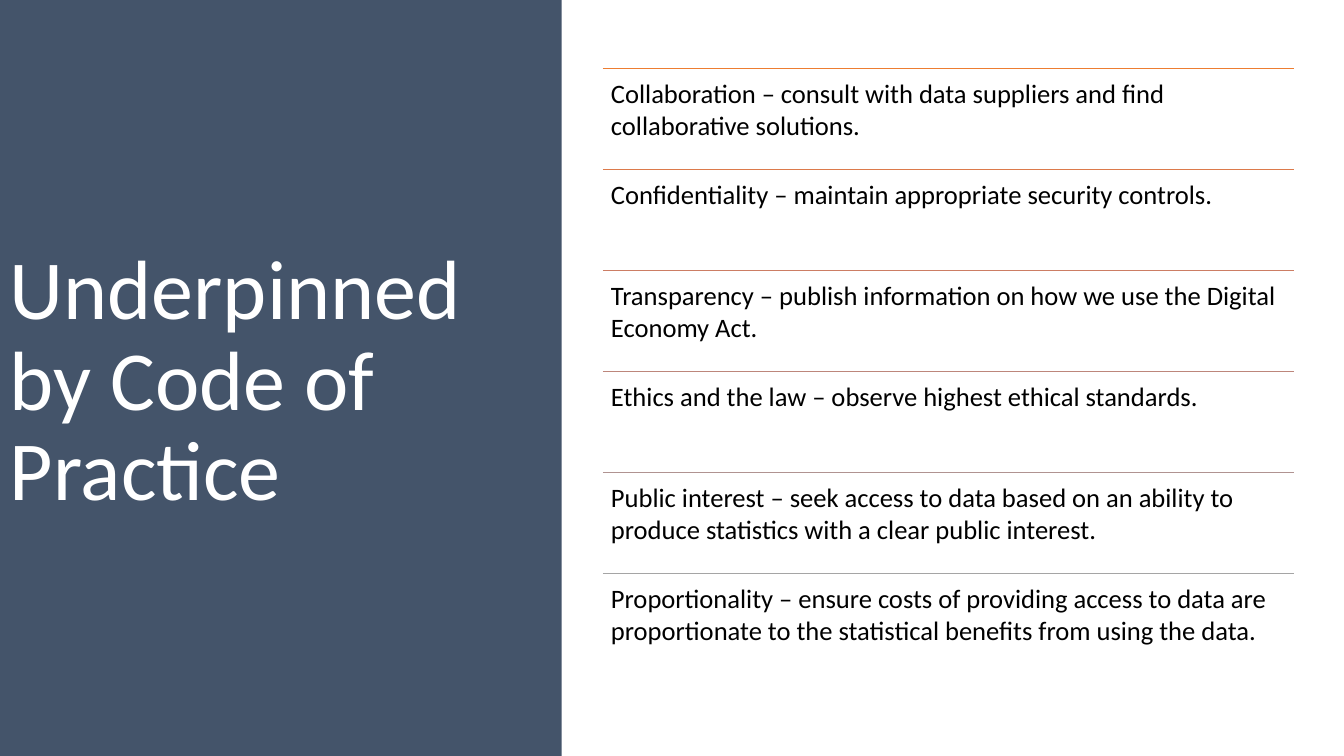
import pptx
import pptx.dml.color
import pptx.enum.shapes
import pptx.enum.text
import pptx.util
from lxml import etree
from pptx.oxml.ns import qn

RGBColor = pptx.dml.color.RGBColor
Inches = pptx.util.Inches

WHITE = RGBColor(0xFF, 0xFF, 0xFF)
BLACK = RGBColor(0x00, 0x00, 0x00)
SLATE = RGBColor(0x44, 0x54, 0x6A)

TITLE = "Underpinned by Code of Practice"
PRINCIPLES = [
    ("Collaboration – consult with data suppliers and find collaborative solutions.",
     RGBColor(0xED, 0x7D, 0x31)),
    ("Confidentiality – maintain appropriate security controls.",
     RGBColor(0xDC, 0x7A, 0x4B)),
    ("Transparency – publish information on how we use the Digital Economy Act.",
     RGBColor(0xCC, 0x7D, 0x64)),
    ("Ethics and the law – observe highest ethical standards.",
     RGBColor(0xBD, 0x86, 0x7B)),
    ("Public interest – seek access to data based on an ability to produce "
     "statistics with a clear public interest.",
     RGBColor(0xB0, 0x93, 0x91)),
    ("Proportionality – ensure costs of providing access to data are "
     "proportionate to the statistical benefits from using the data.",
     RGBColor(0xA5, 0xA5, 0xA5)),
]

SLIDE_W, SLIDE_H = 13.33, 7.5
PANEL_W, PANEL_H = 5.57, 7.6
LIST_LEFT, LIST_TOP, LIST_W = 5.98, 0.68, 6.85
ROW_H = 1.0025

TITLE_FONT = {"name": "Calibri", "size": pptx.util.Pt(60)}
ROW_FONT = {"name": "Calibri", "size": pptx.util.Pt(19)}
ROW_FRAME = {
    "word_wrap": True,
    "vertical_anchor": pptx.enum.text.MSO_ANCHOR.TOP,
    "margin_left": Inches(0.08),
    "margin_right": Inches(0.08),
    "margin_top": Inches(0.08),
    "margin_bottom": Inches(0.08),
}
TITLE_FRAME = {
    "word_wrap": True,
    "vertical_anchor": pptx.enum.text.MSO_ANCHOR.MIDDLE,
}


def write(sp, text, frame, font, color):
    """Put one left-aligned paragraph into a shape; return the paragraph."""
    tf = sp.text_frame
    for name, value in frame.items():
        setattr(tf, name, value)
    p = tf.paragraphs[0]
    p.alignment = pptx.enum.text.PP_ALIGN.LEFT
    r = p.add_run()
    r.text = text
    for name, value in font.items():
        setattr(r.font, name, value)
    r.font.color.rgb = color
    return p


def add_title_panel(s):
    sp = s.shapes.add_shape(pptx.enum.shapes.MSO_SHAPE.RECTANGLE,
                            0, 0, Inches(PANEL_W), Inches(PANEL_H))
    sp.shadow.inherit = False
    sp.fill.solid()
    sp.fill.fore_color.rgb = SLATE
    sp.line.fill.background()
    write(sp, TITLE, TITLE_FRAME, TITLE_FONT, WHITE).line_spacing = 0.9


def add_rule(s, y, color):
    line = s.shapes.add_connector(
        pptx.enum.shapes.MSO_CONNECTOR.STRAIGHT,
        Inches(LIST_LEFT), Inches(y), Inches(LIST_LEFT + LIST_W), Inches(y))
    line.line.color.rgb = color
    line.line.width = pptx.util.Pt(1)
    etree.SubElement(line._element.spPr, qn("a:effectLst"))


def add_principles(s):
    for i, (text, color) in enumerate(PRINCIPLES):
        y = LIST_TOP + i * ROW_H
        add_rule(s, y, color)
        sp = s.shapes.add_textbox(Inches(LIST_LEFT), Inches(y),
                                  Inches(LIST_W), Inches(ROW_H))
        write(sp, text, ROW_FRAME, ROW_FONT, BLACK)


def main():
    prs = pptx.Presentation()
    prs.slide_width = Inches(SLIDE_W)
    prs.slide_height = Inches(SLIDE_H)
    s = prs.slides.add_slide(prs.slide_layouts[6])
    add_title_panel(s)
    add_principles(s)
    prs.save("out.pptx")


if __name__ == "__main__":
    main()
